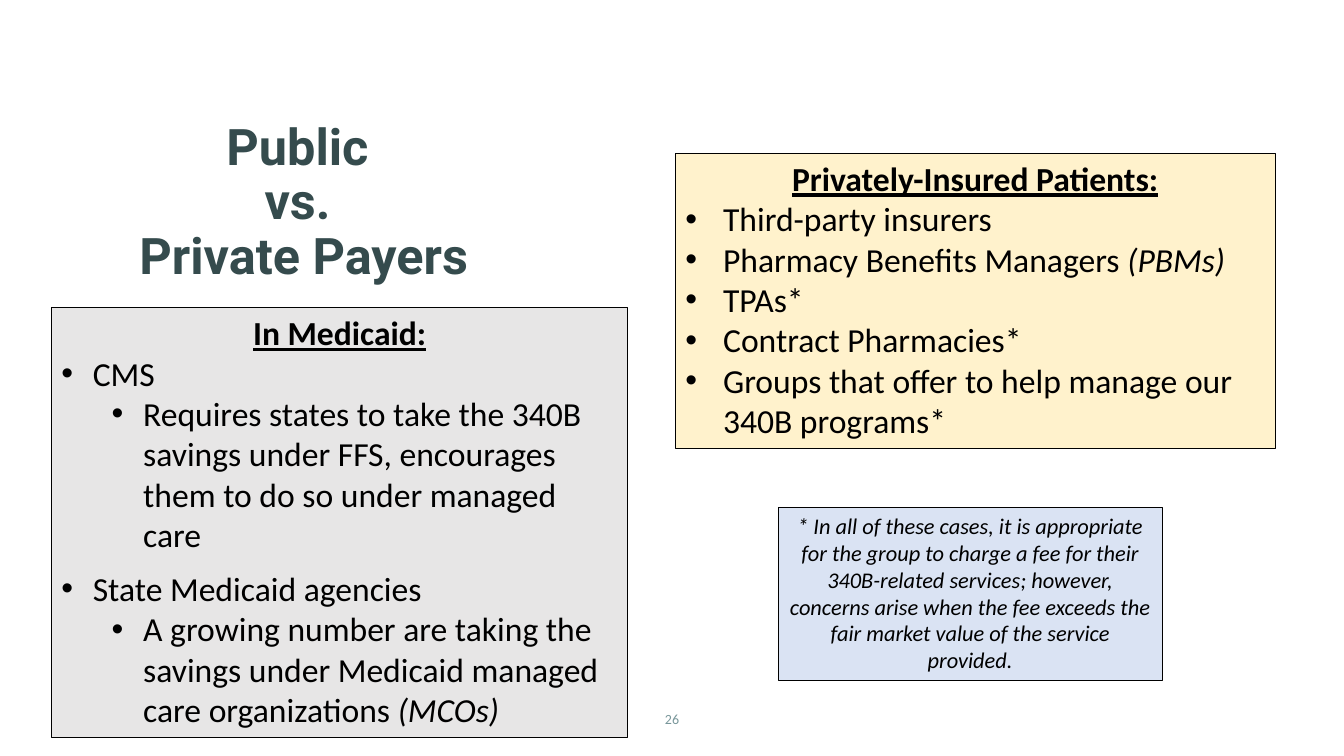
from lxml import etree
from pptx import Presentation, util as u
from pptx.dml.color import RGBColor
from pptx.enum import shapes, text
from pptx.oxml import ns

COLORS = {
    "black": "000000",
    "title": "354B4D",
    "page": "78969A",
    "medicaid": "E7E6E6",
    "private": "FFF2CC",
    "note": "DAE3F3",
}
HEADING = {"size": u.Pt(24), "bold": True, "underline": True}
BODY = {"size": u.Pt(24)}
ITALIC = {"size": u.Pt(24), "italic": True}
NOTE = {"size": u.Pt(16), "italic": True}
TITLE = {"size": u.Pt(36), "bold": True, "name": "Roboto"}
PAGE = {"size": u.Pt(10)}


def rgb(color):
    return RGBColor.from_string(COLORS[color])


def add_words(paragraph, words, style, color="black"):
    """Add one formatted run."""
    run = paragraph.add_run()
    run.text = words
    for attribute, value in {"name": "Calibri", **style}.items():
        setattr(run.font, attribute, value)
    run.font.color.rgb = rgb(color)


def add_centred(paragraph, words, style, color="black"):
    """Fill a centred paragraph; line breaks stay inside it."""
    paragraph.alignment = text.PP_ALIGN.CENTER
    for index, line in enumerate(words.split("\n")):
        if index:
            paragraph.add_line_break()
        add_words(paragraph, line, style, color)


def add_bullet(frame, words, indent, hang, level=0, aside="", gap=0):
    """Add a bulleted paragraph, with an optional italic ending."""
    paragraph = frame.add_paragraph()
    paragraph.level = level
    paragraph.alignment = text.PP_ALIGN.LEFT
    paragraph.space_before = u.Pt(gap)
    properties = paragraph._p.get_or_add_pPr()
    properties.set("marL", str(u.Pt(indent)))
    properties.set("indent", str(-u.Pt(hang)))
    for tag, attribute, value in (("a:buFont", "typeface", "Arial"),
                                  ("a:buChar", "char", "•")):
        etree.SubElement(properties, ns.qn(tag)).set(attribute, value)
    add_words(paragraph, words, BODY)
    if aside:
        add_words(paragraph, aside, ITALIC)


def add_panel(slide, bounds, color, heading, style):
    """Add an outlined box with a centred first paragraph."""
    panel = slide.shapes.add_shape(shapes.MSO_SHAPE.RECTANGLE, *map(u.Pt, bounds))
    panel.shadow.inherit = False
    panel.fill.solid()
    panel.fill.fore_color.rgb = rgb(color)
    panel.line.color.rgb = rgb("black")
    panel.line.width = u.Pt(0.75)
    frame = panel.text_frame
    frame.word_wrap = True
    frame.auto_size = text.MSO_AUTO_SIZE.SHAPE_TO_FIT_TEXT
    frame.vertical_anchor = text.MSO_ANCHOR.TOP
    add_centred(frame.paragraphs[0], heading, style)
    return frame


def add_label(slide, bounds, words, style, color, spacing=1.0):
    """Add a plain centred text box."""
    frame = slide.shapes.add_textbox(*map(u.Pt, bounds)).text_frame
    frame.word_wrap = True
    frame.auto_size = text.MSO_AUTO_SIZE.NONE
    frame.vertical_anchor = text.MSO_ANCHOR.MIDDLE
    frame.paragraphs[0].line_spacing = spacing
    add_centred(frame.paragraphs[0], words, style, color)


def main():
    deck = Presentation()
    deck.slide_width, deck.slide_height = u.Pt(960), u.Pt(540)
    slide = deck.slides.add_slide(deck.slide_layouts[6])

    # Page number and title
    add_label(slide, (399, 502.5, 162, 21.6), "26", PAGE, "page")
    add_label(slide, (66.2, 109.4, 301.7, 72), "Public \nvs. \nPrivate Payers",
              TITLE, "title", 0.9)

    # Public payers
    medicaid = add_panel(slide, (36.7, 219.6, 411.8, 307.4), "medicaid",
                         "In Medicaid:", HEADING)
    outer, inner, hang = 22.5, 58.5, 22.5
    add_bullet(medicaid, "CMS", outer, hang)
    add_bullet(medicaid, "Requires states to take the 340B savings under FFS, "
               "encourages them to do so under managed care", inner, hang, 1)
    add_bullet(medicaid, "State Medicaid agencies", outer, hang, gap=9.75)
    add_bullet(medicaid, "A growing number are taking the savings under Medicaid "
               "managed care organizations ", inner, hang, 1, "(MCOs)")

    # Private payers
    private = add_panel(slide, (482.4, 109.4, 428.4, 211), "private",
                        "Privately-Insured Patients:", HEADING)
    for payer, aside in (
        ("Third-party insurers", ""),
        ("Pharmacy Benefits Managers ", "(PBMs)"),
        ("TPAs*", ""),
        ("Contract Pharmacies*", ""),
        ("Groups that offer to help manage our 340B programs*", ""),
    ):
        add_bullet(private, payer, 27, 27, aside=aside)

    # Footnote on fees
    add_panel(slide, (555.8, 362.2, 274.3, 123.8), "note",
              "* In all of these cases, it is appropriate for the group to charge "
              "a fee for their 340B-related services; however, concerns arise when "
              "the fee exceeds the fair market value of the service provided.", NOTE)

    deck.save("out.pptx")


if __name__ == "__main__":
    main()
